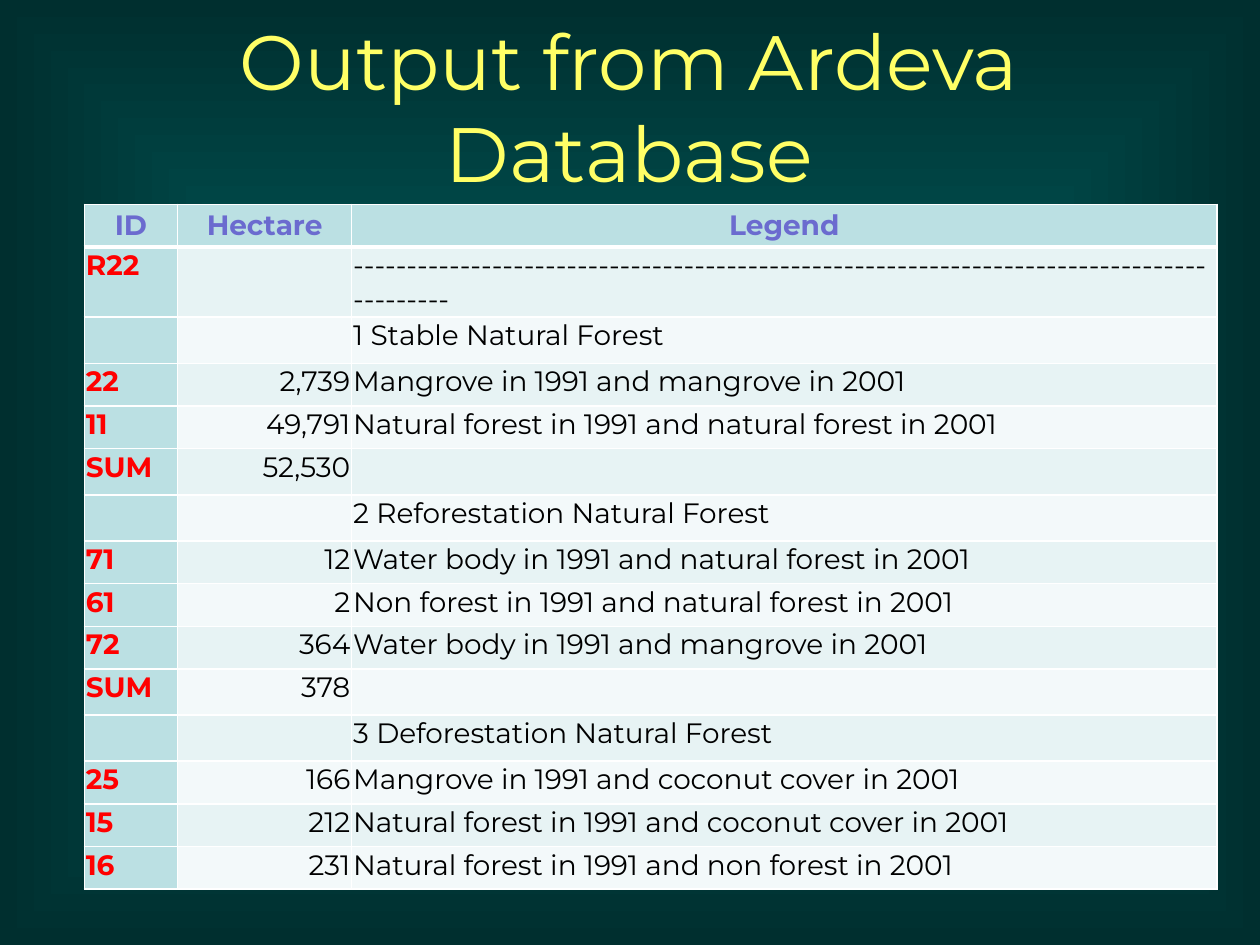
import pptx
import pptx.util
import pptx.oxml
import pptx.oxml.ns
import pptx.dml.color
import pptx.enum.text
import lxml.etree

Cm, Pt = pptx.util.Cm, pptx.util.Pt
RGB = pptx.dml.color.RGBColor
ALIGN = pptx.enum.text.PP_ALIGN
ANCHOR = pptx.enum.text.MSO_ANCHOR
qn = pptx.oxml.ns.qn

FONT = "Montserrat"
YELLOW = RGB(0xFF, 0xFF, 0x66)
VIOLET = RGB(0x6B, 0x6B, 0xCF)
RED = RGB(0xFF, 0, 0)
BLACK = RGB(0, 0, 0)
WHITE = RGB(0xFF, 0xFF, 0xFF)
HEAD_FILL = RGB(0xBB, 0xE0, 0xE3)
BANDS = [RGB(0xF3, 0xF9, 0xFA), RGB(0xE7, 0xF3, 0xF4)]
BG_INNER = RGB(0, 0x66, 0x66)
BG_OUTER = RGB(0, 0x2F, 0x2F)

COL_WIDTHS = [1.88, 3.51, 17.44]
ALIGNS = [ALIGN.LEFT, ALIGN.RIGHT, ALIGN.LEFT]
ROWS = [
    ("ID", "Hectare", "Legend"),
    ("R22", "", "-" * 89),
    ("", "", "1 Stable Natural Forest"),
    ("22", "2,739", "Mangrove in 1991 and mangrove in 2001"),
    ("11", "49,791", "Natural forest in 1991 and natural forest in 2001"),
    ("SUM", "52,530", ""),
    ("", "", "2 Reforestation Natural Forest"),
    ("71", "12", "Water body in 1991 and natural forest in 2001"),
    ("61", "2", "Non forest in 1991 and natural forest in 2001"),
    ("72", "364", "Water body in 1991 and mangrove in 2001"),
    ("SUM", "378", ""),
    ("", "", "3 Deforestation Natural Forest"),
    ("25", "166", "Mangrove in 1991 and coconut cover in 2001"),
    ("15", "212", "Natural forest in 1991 and coconut cover in 2001"),
    ("16", "231", "Natural forest in 1991 and non forest in 2001"),
]


def set_attrs(obj, values):
    for name, value in values.items():
        setattr(obj, name, value)


def write(tf, text, align, color, size, bold=False):
    p = tf.paragraphs[0]
    p.alignment = align
    if text:
        r = p.add_run()
        r.text = text
        set_attrs(r.font, {"name": FONT, "size": Pt(size), "bold": bold})
        r.font.color.rgb = color


def add_background(s):
    s.background.fill.gradient()
    grad = s.background._cSld.find(".//" + qn("a:gradFill"))
    for child in list(grad):
        grad.remove(child)
    stops = lxml.etree.SubElement(grad, qn("a:gsLst"))
    for pos, color in ((0, BG_INNER), (100000, BG_OUTER)):
        gs = lxml.etree.SubElement(stops, qn("a:gs"), pos=str(pos))
        lxml.etree.SubElement(gs, qn("a:srgbClr"), val=str(color))
    shade = lxml.etree.SubElement(grad, qn("a:path"), path="shape")
    lxml.etree.SubElement(shade, qn("a:fillToRect"),
                          {side: "50000" for side in "ltrb"})


def add_title(s, left, top, width, height):
    tf = s.shapes.add_textbox(left, top, width, height).text_frame
    set_attrs(tf, {"word_wrap": True, "vertical_anchor": ANCHOR.MIDDLE})
    write(tf, "Output from Ardeva Database", ALIGN.CENTER, YELLOW, 44)


def add_borders(cell, widths):
    tc_pr = cell._tc.get_or_add_tcPr()
    for side, width in widths.items():
        ln = lxml.etree.SubElement(tc_pr, qn("a:ln" + side), w=str(Pt(width)))
        fill = lxml.etree.SubElement(ln, qn("a:solidFill"))
        lxml.etree.SubElement(fill, qn("a:srgbClr"), val=str(WHITE))


def format_cell(cell, text, row, col):
    header = row == 0
    set_attrs(cell, {"margin_" + side: Cm(0.03)
                     for side in ("left", "right", "top", "bottom")})
    cell.vertical_anchor = ANCHOR.MIDDLE if header else ANCHOR.TOP
    # A thick rule parts the header from the body
    add_borders(cell, {"L": 1, "R": 1, "T": 3 if row == 1 else 1,
                       "B": 3 if header else 1})
    cell.fill.solid()
    cell.fill.fore_color.rgb = HEAD_FILL if header or col == 0 else BANDS[row % 2]
    color = VIOLET if header else RED if col == 0 else BLACK
    align = ALIGN.CENTER if header else ALIGNS[col]
    write(cell.text_frame, text, align, color, 16, header or col == 0)


def add_forest_table(s, left, top, width, height):
    table = s.shapes.add_table(len(ROWS), len(COL_WIDTHS),
                               left, top, width, height).table
    for column, col_width in zip(table.columns, COL_WIDTHS):
        column.width = Cm(col_width)
    for i, texts in enumerate(ROWS):
        # Rows with a blank cell are slightly taller
        table.rows[i].height = Cm(0.86 if all(texts) else 0.93)
        for j, text in enumerate(texts):
            format_cell(table.cell(i, j), text, i, j)


def main():
    prs = pptx.Presentation()
    set_attrs(prs, {"slide_width": Cm(25.4), "slide_height": Cm(19.05)})
    s = prs.slides.add_slide(prs.slide_layouts[6])
    add_background(s)
    add_title(s, Cm(1.27), Cm(0.33), Cm(22.83), Cm(3.61))
    add_forest_table(s, Cm(1.7), Cm(4.12), Cm(22.83), Cm(13.34))
    prs.save("out.pptx")


if __name__ == "__main__":
    main()
